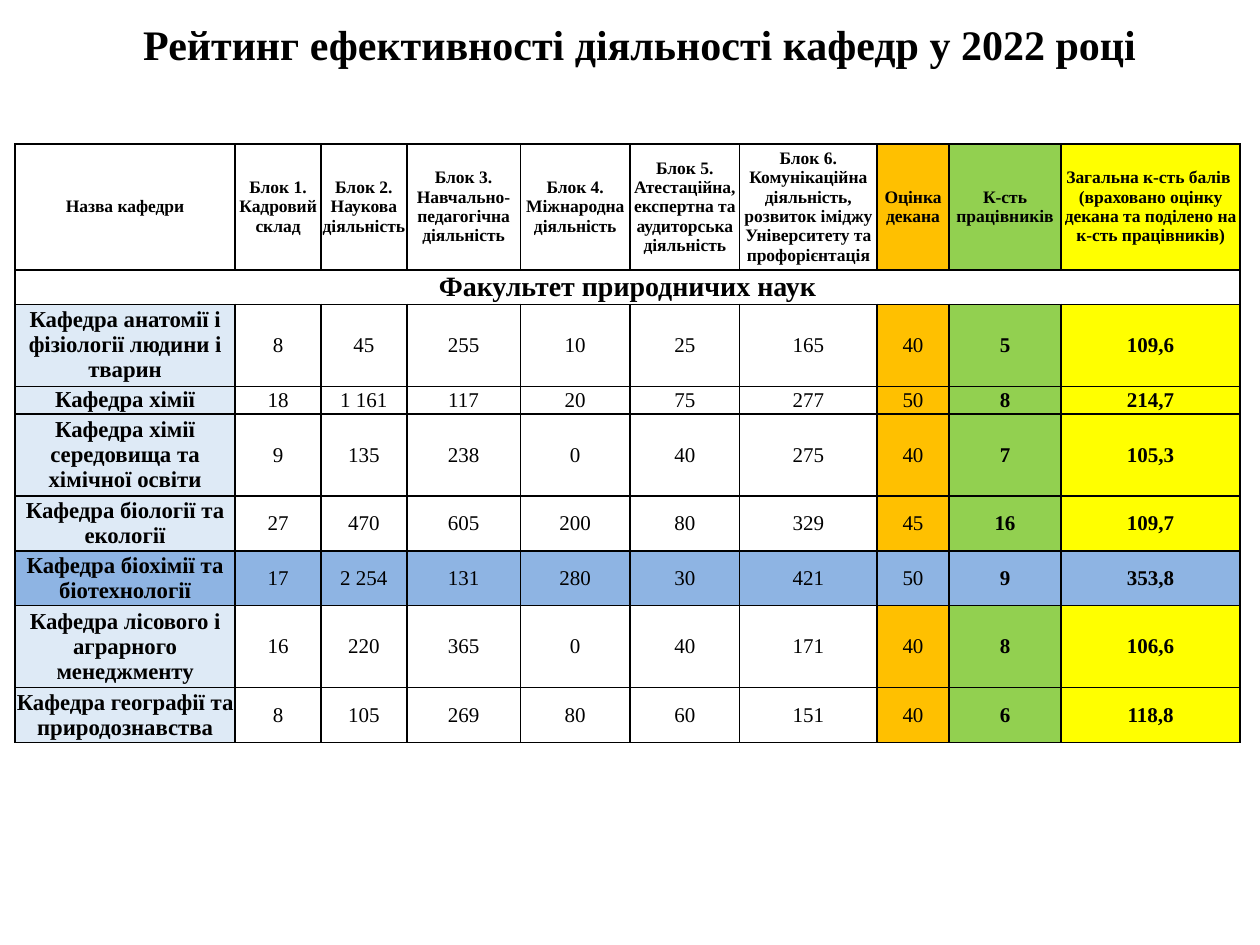
from copy import deepcopy

from lxml.etree import SubElement
from pptx import Presentation
from pptx.dml.color import RGBColor
from pptx.enum.text import MSO_ANCHOR, PP_ALIGN
from pptx.oxml.ns import qn
from pptx.util import Cm, Pt

FONT = "Times New Roman"
BLACK = "000000"
NAME_FILL = "DEEAF6"
LEADER_FILL = "8EB4E3"
LEADER = "Кафедра біохімії та біотехнології"
SCORE_FILLS = {7: "FFC000", 8: "92D050", 9: "FFFF00"}

COLUMN_WIDTHS = [4.44, 1.73, 1.73, 2.29, 2.21, 2.21, 2.77, 1.45, 2.26, 3.61]
HEADER_HEIGHT, FACULTY_HEIGHT = 2.54, 0.69
HEIGHT_BY_LINES = {1: 0.56, 2: 1.09, 3: 1.65}

HEADINGS = [
    "Назва кафедри",
    "Блок 1. Кадровий склад",
    "Блок 2. Наукова діяльність",
    "Блок 3. Навчально-педагогічна діяльність",
    "Блок 4. Міжнародна діяльність",
    "Блок 5. Атестаційна, експертна та аудиторська діяльність",
    "Блок 6. Комунікаційна діяльність, розвиток іміджу Університету та профорієнтація",
    "Оцінка декана",
    "К-сть працівників",
    "Загальна к-сть балів \n(враховано оцінку декана та поділено на к-сть працівників)",
]
FACULTY = "Факультет природничих наук"
# Lines taken by the name, name, scores
DEPARTMENTS = [
    (3, "Кафедра анатомії і фізіології людини і тварин",
     ["8", "45", "255", "10", "25", "165", "40", "5", "109,6"]),
    (1, "Кафедра хімії",
     ["18", "1 161", "117", "20", "75", "277", "50", "8", "214,7"]),
    (3, "Кафедра хімії середовища та хімічної освіти",
     ["9", "135", "238", "0", "40", "275", "40", "7", "105,3"]),
    (2, "Кафедра біології та екології",
     ["27", "470", "605", "200", "80", "329", "45", "16", "109,7"]),
    (2, LEADER,
     ["17", "2 254", "131", "280", "30", "421", "50", "9", "353,8"]),
    (3, "Кафедра лісового і аграрного менеджменту",
     ["16", "220", "365", "0", "40", "171", "40", "8", "106,6"]),
    (2, "Кафедра географії та природознавства",
     ["8", "105", "269", "80", "60", "151", "40", "6", "118,8"]),
]


def color(hex_code):
    return RGBColor.from_string(hex_code)


def write(paragraph, text, size, bold=True):
    paragraph.text = text
    paragraph.alignment = PP_ALIGN.CENTER
    for run in paragraph.runs:
        for attribute, value in {"name": FONT, "size": Pt(size), "bold": bold}.items():
            setattr(run.font, attribute, value)
        run.font.color.rgb = color(BLACK)
    for line_break in paragraph._p.findall(qn("a:br")):
        line_break.insert(0, deepcopy(paragraph.runs[0]._r.rPr))


def add_borders(cell):
    """Put a 1 pt black line on every side; lines precede the fill in tcPr."""
    properties = cell._tc.get_or_add_tcPr()
    for position, side in enumerate(("a:lnL", "a:lnR", "a:lnT", "a:lnB")):
        line = SubElement(properties, qn(side), w=str(Pt(1)))
        SubElement(SubElement(line, qn("a:solidFill")), qn("a:srgbClr"), val=BLACK)
        properties.insert(position, line)


def style_cell(cell, fill=None):
    layout = {
        "margin_left": Cm(0.03), "margin_right": Cm(0.03),
        "margin_top": 0, "margin_bottom": 0,
        "vertical_anchor": MSO_ANCHOR.MIDDLE,
    }
    for attribute, value in layout.items():
        setattr(cell, attribute, value)
    if fill:
        cell.fill.solid()
        cell.fill.fore_color.rgb = color(fill)
    else:
        cell.fill.background()
    add_borders(cell)


def add_title(slide, left, top, width, height):
    frame = slide.shapes.add_textbox(Cm(left), Cm(top), Cm(width), Cm(height)).text_frame
    frame.word_wrap = True
    write(frame.paragraphs[0], "Рейтинг ефективності діяльності кафедр у 2022 році", 24)


def add_rating_table(slide, left, top):
    heights = [HEADER_HEIGHT, FACULTY_HEIGHT]
    heights += [HEIGHT_BY_LINES[lines] for lines, _, _ in DEPARTMENTS]
    table = slide.shapes.add_table(
        len(heights), len(COLUMN_WIDTHS),
        Cm(left), Cm(top), Cm(sum(COLUMN_WIDTHS)), Cm(sum(heights)),
    ).table
    table.first_row = table.horz_banding = False
    for column, width in zip(table.columns, COLUMN_WIDTHS):
        column.width = Cm(width)
    for row, height in zip(table.rows, heights):
        row.height = Cm(height)

    for column, heading in enumerate(HEADINGS):
        cell = table.cell(0, column)
        write(cell.text_frame.paragraphs[0], heading, 10)
        style_cell(cell, SCORE_FILLS.get(column))

    for cell in table.rows[1].cells:
        style_cell(cell)
    faculty = table.cell(1, 0)
    faculty.merge(table.cell(1, len(HEADINGS) - 1))
    write(faculty.text_frame.paragraphs[0], FACULTY, 16)

    fills = {0: NAME_FILL, **SCORE_FILLS}
    for row, (_, name, scores) in enumerate(DEPARTMENTS, start=2):
        for column, text in enumerate([name, *scores]):
            cell = table.cell(row, column)
            write(cell.text_frame.paragraphs[0], text,
                  size=12 if column else 13, bold=column in (0, 8, 9))
            style_cell(cell, LEADER_FILL if name == LEADER else fills.get(column))


def main():
    presentation = Presentation()
    presentation.slide_width, presentation.slide_height = Cm(25.4), Cm(19.05)
    slide = presentation.slides.add_slide(presentation.slide_layouts[6])
    add_title(slide, 1.68, 0.25, 22.43, 1.27)
    add_rating_table(slide, 0.3, 2.9)
    presentation.save("out.pptx")


if __name__ == "__main__":
    main()
